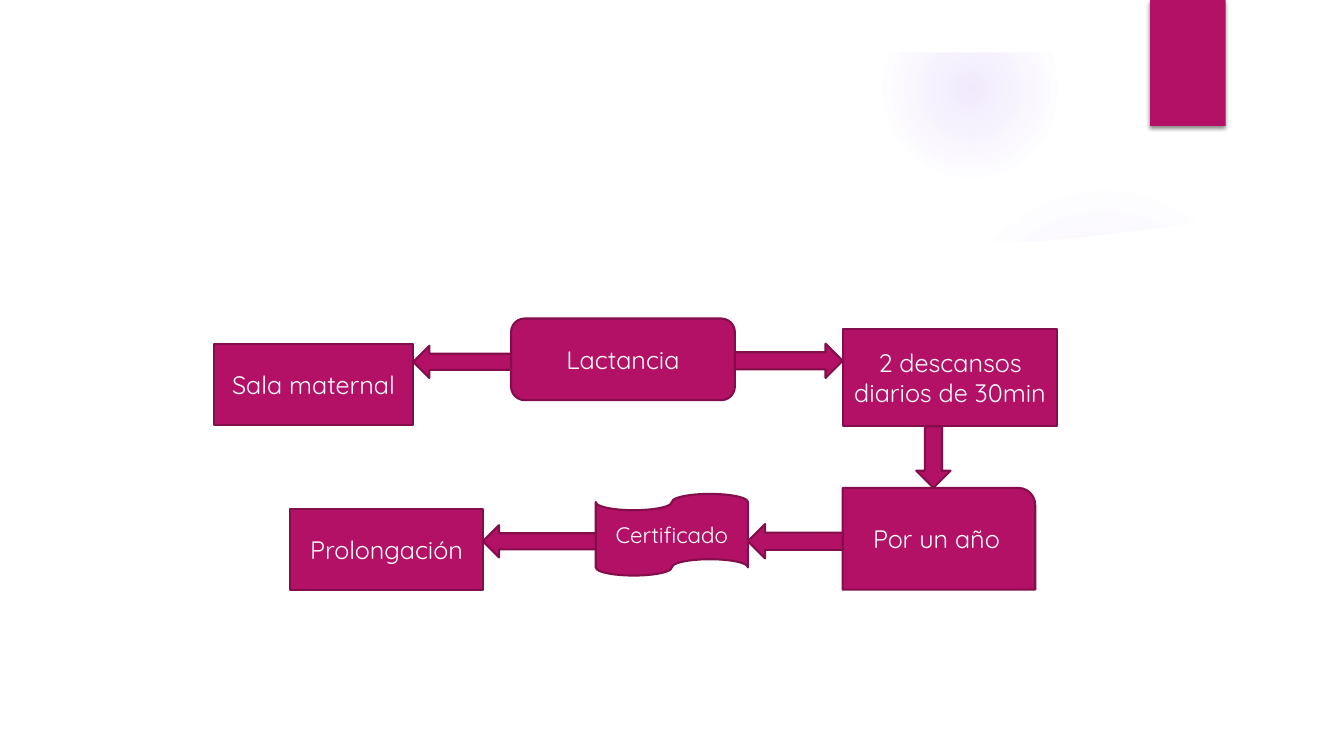
from dataclasses import dataclass

from lxml.etree import SubElement
from pptx import Presentation
from pptx.dml.color import RGBColor
from pptx.enum.shapes import MSO_SHAPE
from pptx.enum.text import MSO_ANCHOR, PP_ALIGN
from pptx.oxml import parse_xml
from pptx.oxml.ns import nsdecls, qn
from pptx.util import Inches, Pt

COLS, ROWS = 133.33, 75  # grid of tenths of an inch


@dataclass(frozen=True)
class Theme:
    main: str = "B31166"
    edge: str = "840D4B"
    glow: str = "9B6BF2"
    paper: str = "FFFFFF"
    font: str = "Quicksand"
    body: int = 18
    small: int = 16
    line: float = 1.5


THEME = Theme()


def grid(cells):
    return Inches(cells / 10)


def paint(shape, fill, line=None):
    shape.shadow.inherit = False
    shape.fill.solid()
    shape.fill.fore_color.rgb = RGBColor.from_string(fill)
    if line:
        shape.line.color.rgb = RGBColor.from_string(line)
        shape.line.width = Pt(THEME.line)
    else:
        shape.line.fill.background()


def block(slide, kind, area, fill=THEME.main, line=THEME.edge):
    shape = slide.shapes.add_shape(kind, *map(grid, area))
    paint(shape, fill, line)
    return shape


def box(slide, kind, area, text, size=THEME.body):
    shape = block(slide, kind, area)
    frame = shape.text_frame
    frame.word_wrap = True
    frame.vertical_anchor = MSO_ANCHOR.MIDDLE
    para = frame.paragraphs[0]
    para.text = text
    para.alignment = PP_ALIGN.CENTER
    para.font.name = THEME.font
    para.font.size = Pt(size)
    para.font.color.rgb = RGBColor.from_string(THEME.paper)
    return shape


def link(slide, kind, west, east, mid, thick):
    """Fill the gap between two boxes with a block arrow centred on row mid."""
    left = west[0] + west[2]
    block(slide, kind, (left, mid - thick / 2, east[0] - left, thick))


def glow(slide, area, stops):
    """Draw a disc that fades outward; stops are (position, opacity) percents."""
    disc = block(slide, MSO_SHAPE.OVAL, area, line=None)
    marks = "".join(
        f'<a:gs pos="{pos * 1000}"><a:srgbClr val="{THEME.glow}">'
        f'<a:alpha val="{alpha * 1000}"/></a:srgbClr></a:gs>'
        for pos, alpha in stops)
    fade = parse_xml(
        f'<a:gradFill {nsdecls("a")} rotWithShape="1"><a:gsLst>{marks}</a:gsLst>'
        '<a:path path="circle"><a:fillToRect l="50000" t="50000" r="50000"'
        ' b="50000"/></a:path></a:gradFill>')
    props = disc._element.spPr
    props.replace(props.find(qn("a:solidFill")), fade)


def wave(slide, points):
    path = slide.shapes.build_freeform(*points[0], scale=grid(1))
    path.add_line_segments(points[1:], close=True)
    paint(path.convert_to_shape(), THEME.paper)


def shade(shape):
    """Give the shape a soft shadow below."""
    effects = shape._element.spPr.find(qn("a:effectLst"))
    cast = SubElement(effects, qn("a:outerShdw"), blurRad=str(Pt(3)),
                      dist=str(Pt(2)), dir="5400000", rotWithShape="0")
    tint = SubElement(cast, qn("a:srgbClr"), val="000000")
    SubElement(tint, qn("a:alpha"), val="45000")


def backdrop(slide):
    glow(slide, (94.1, 18.3, 30.8, 30.8), [(0, 7), (36, 6), (69, 0)])
    glow(slide, (87.5, 0.1, 17.5, 17.5), [(0, 14), (36, 7), (73, 0)])
    wave(slide, [(5, 20.4), (5, 70), (128.4, 70), (128.4, 20.4),
                 (120, 21.7), (111.6, 22.7), (103.2, 23.5), (94.9, 24.1),
                 (86.7, 24.5), (70.8, 24.8), (55.9, 24.6), (44.4, 24.1),
                 (32.1, 23.3), (18.7, 22.1)])
    block(slide, MSO_SHAPE.RECTANGLE, (0, 0, COLS, 5.2), THEME.paper, None)
    shade(block(slide, MSO_SHAPE.RECTANGLE, (114.1, 0, 7.5, 12.5), line=None))


def flow(slide):
    room = (21.2, 34.1, 19.8, 8.1)
    nursing = (50.7, 31.6, 22.2, 8.1)
    breaks = (83.6, 32.6, 21.3, 9.7)
    year = (83.6, 48.4, 19.1, 10.1)
    proof = (59.1, 49, 15.1, 8.1)
    extra = (28.8, 50.5, 19.1, 8)

    box(slide, MSO_SHAPE.FLOWCHART_PROCESS, room, "Sala maternal")
    box(slide, MSO_SHAPE.FLOWCHART_ALTERNATE_PROCESS, nursing, "Lactancia")
    box(slide, MSO_SHAPE.RECTANGLE, breaks, "2 descansos diarios de 30min")
    box(slide, MSO_SHAPE.ROUND_1_RECTANGLE, year, "Por un año")
    box(slide, MSO_SHAPE.FLOWCHART_PUNCHED_TAPE, proof, "Certificado", THEME.small)
    box(slide, MSO_SHAPE.FLOWCHART_PROCESS, extra, "Prolongación")

    link(slide, MSO_SHAPE.LEFT_ARROW, room, nursing, 35.9, 3.2)
    link(slide, MSO_SHAPE.RIGHT_ARROW, nursing, breaks, 35.8, 3.4)
    link(slide, MSO_SHAPE.LEFT_ARROW, proof, year, 53.7, 3.4)
    link(slide, MSO_SHAPE.LEFT_ARROW, extra, proof, 53.7, 3.2)
    top = breaks[1] + breaks[3]
    block(slide, MSO_SHAPE.DOWN_ARROW, (90.9, top, 3.4, year[1] - top))


def main():
    deck = Presentation()
    deck.slide_width, deck.slide_height = grid(COLS), grid(ROWS)
    slide = deck.slides.add_slide(deck.slide_layouts[6])
    backdrop(slide)
    flow(slide)
    deck.save("out.pptx")


if __name__ == "__main__":
    main()
